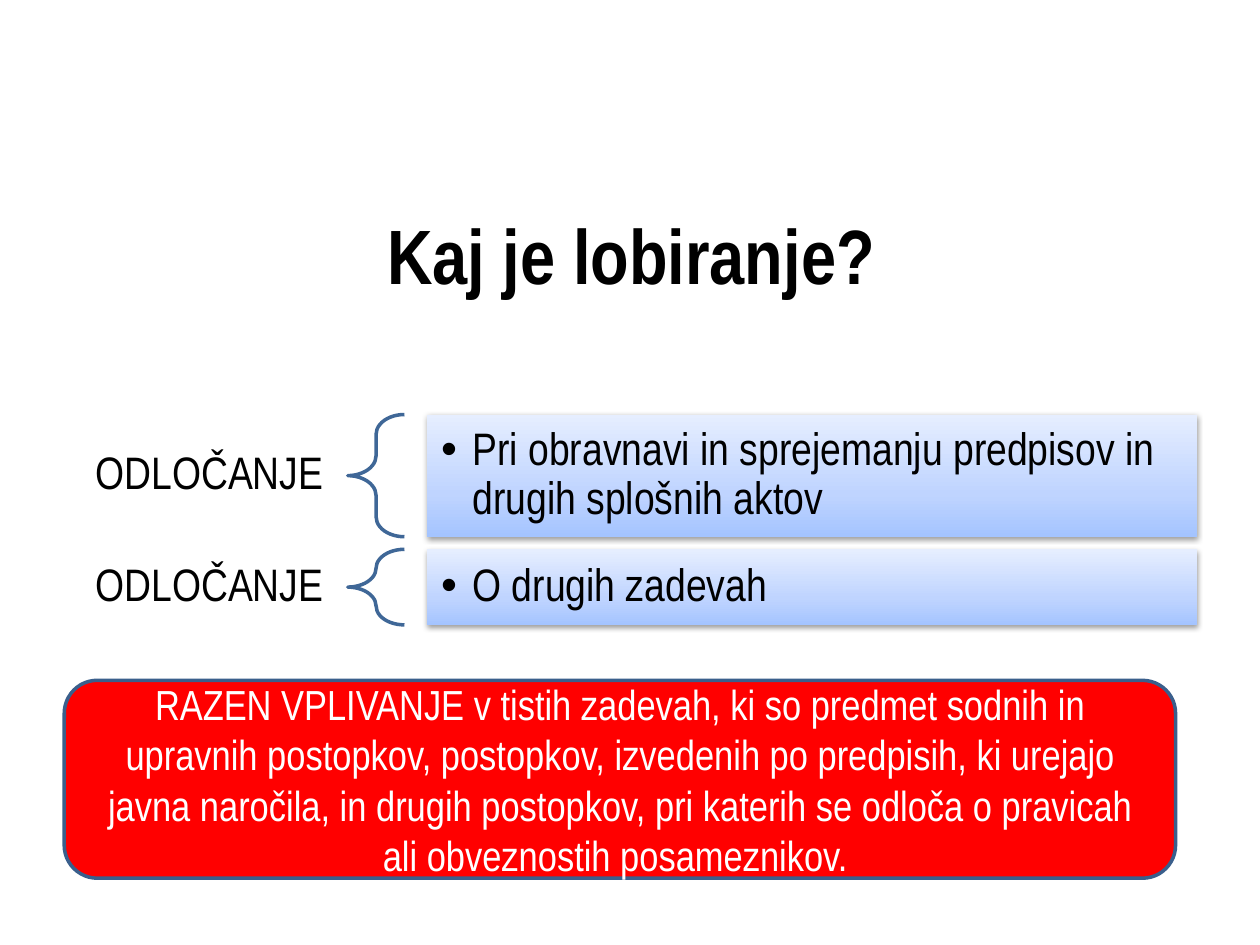
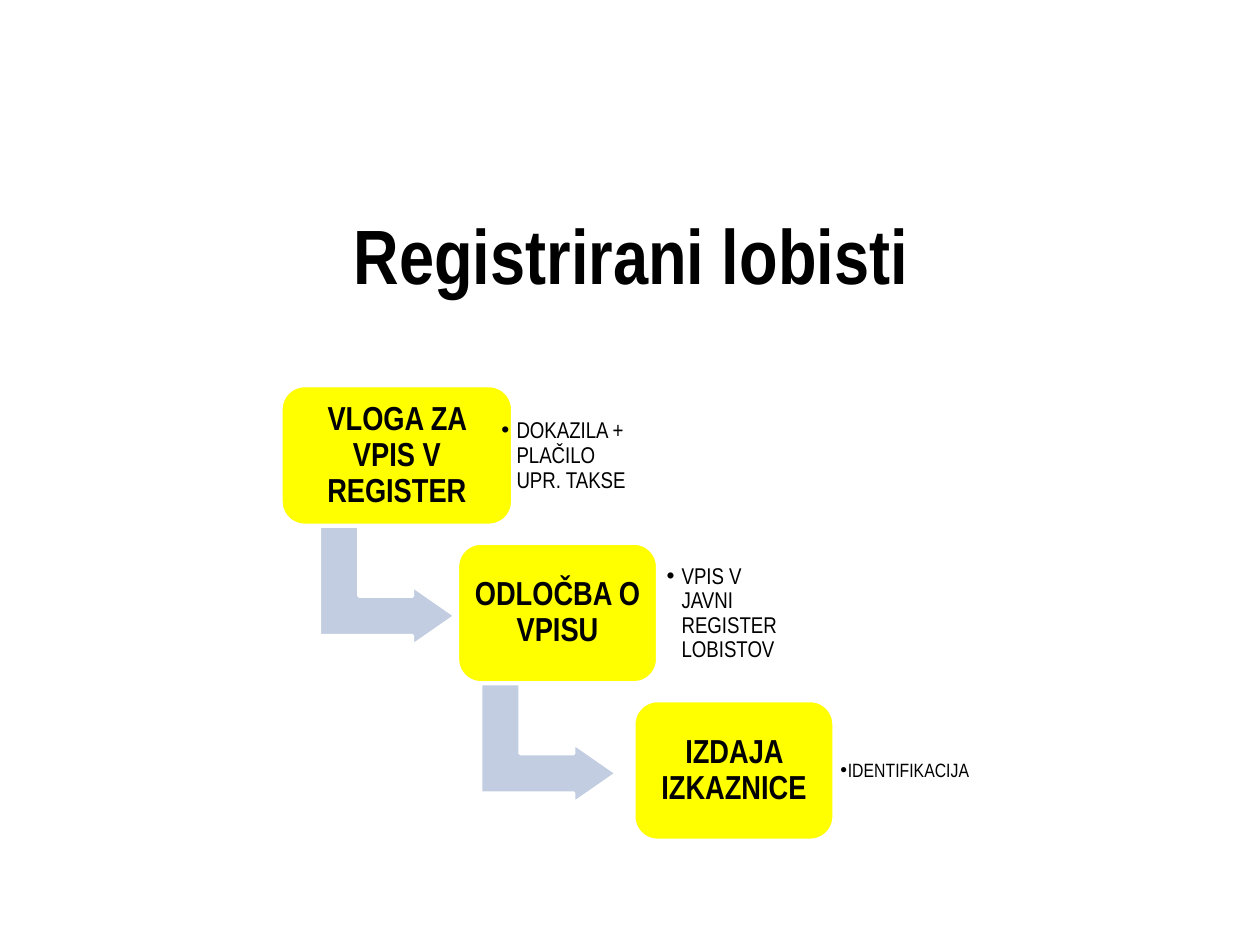
from dataclasses import dataclass

from lxml import etree
from pptx import Presentation
from pptx.dml.color import RGBColor
from pptx.enum.shapes import MSO_SHAPE
from pptx.enum.text import MSO_ANCHOR, PP_ALIGN
from pptx.oxml.ns import qn
from pptx.util import Emu, Pt

PX = 9144
FONT = "Arial Narrow"
COLORS = {
    "text": "000000",
    "white": "FFFFFF",
    "brace": "3F6797",
    "warning": "FF0000",
    "warning_edge": "3A5F8C",
    "step": "FFFF00",
    "arrow": "C2CDE1",
    "panel_low": "A4C4FF",
    "panel_mid": "BFD4FF",
    "panel_high": "E6EEFF",
}
PANEL_STOPS = ((0, "panel_low"), (35, "panel_mid"), (100, "panel_high"))

RECT = MSO_SHAPE.RECTANGLE
ROUNDED = MSO_SHAPE.ROUNDED_RECTANGLE
BRACE = MSO_SHAPE.LEFT_BRACE
BENT_ARROW = MSO_SHAPE.BENT_UP_ARROW
LEFT = PP_ALIGN.LEFT
CENTER = PP_ALIGN.CENTER
RIGHT = PP_ALIGN.RIGHT
MIDDLE = MSO_ANCHOR.MIDDLE


@dataclass(frozen=True)
class Box:
    left: int
    top: int
    width: int
    height: int

    def emu(self) -> list[Emu]:
        return [Emu(v * PX) for v in (self.left, self.top, self.width, self.height)]


@dataclass(frozen=True)
class TextStyle:
    size: int
    align: PP_ALIGN = LEFT
    color: str = "text"
    bold: bool = False
    spacing: float = 0.9
    margin_x: int = 10
    margin_y: int = 5
    bullet_indent: int = 0


@dataclass(frozen=True)
class Decision:
    label: str
    detail: str
    label_top: int
    top: int
    height: int


@dataclass(frozen=True)
class Step:
    title: str
    width: int
    note: str
    note_left: int
    note_width: int
    note_style: TextStyle


TITLE_BOX = Box(51, 139, 900, 125)
TITLE_STYLE = TextStyle(44, CENTER, bold=True, spacing=1)
LABEL_STYLE = TextStyle(26, RIGHT, margin_x=20, margin_y=7)
DETAIL_STYLE = TextStyle(26, margin_x=11, margin_y=11, bullet_indent=25)
WARNING_STYLE = TextStyle(24, CENTER, "white", spacing=1)
STEP_STYLE = TextStyle(19, CENTER, bold=True, margin_x=7, margin_y=8)
NOTE_STYLE = TextStyle(13, margin_x=7, margin_y=7, bullet_indent=12)
SMALL_NOTE_STYLE = TextStyle(11, margin_x=6, margin_y=6, bullet_indent=6)

DECISIONS = (
    Decision("ODLOČANJE", "Pri obravnavi in sprejemanju predpisov in drugih splošnih aktov",
             349, 329, 97),
    Decision("ODLOČANJE", "O drugih zadevah", 438, 436, 60),
)
EXCEPTION = (
    "RAZEN VPLIVANJE v tistih zadevah, ki so predmet sodnih in upravnih postopkov, "
    "postopkov, izvedenih po predpisih, ki urejajo javna naročila, in drugih postopkov, "
    "pri katerih se odloča o pravicah ali obveznostih posameznikov. "
)
STEPS = (
    Step("VLOGA ZA VPIS V REGISTER", 184, "DOKAZILA + PLAČILO UPR. TAKSE",
         391, 123, NOTE_STYLE),
    Step("ODLOČBA O VPISU", 159, "VPIS V JAVNI REGISTER LOBISTOV", 522, 116, NOTE_STYLE),
    Step("IZDAJA IZKAZNICE", 159, "IDENTIFIKACIJA", 661, 116, SMALL_NOTE_STYLE),
)
STEP_LEFT, STEP_TOP, STEP_DX, STEP_DY, STEP_HEIGHT = 223, 306, 140, 125, 111
ARROW_LEFT, ARROW_DX, ARROW_DROP = 260, 128, 105
NOTE_DROP = 11


def rgb(name: str) -> RGBColor:
    return RGBColor.from_string(COLORS[name])


def write(shape, text: str, style: TextStyle) -> None:
    frame = shape.text_frame
    frame.word_wrap = True
    frame.vertical_anchor = MIDDLE
    frame.margin_left = frame.margin_right = Emu(style.margin_x * PX)
    frame.margin_top = frame.margin_bottom = Emu(style.margin_y * PX)
    paragraph = frame.paragraphs[0]
    if style.bullet_indent:
        props = paragraph._p.get_or_add_pPr()
        props.set("marL", str(style.bullet_indent * PX))
        props.set("indent", str(-style.bullet_indent * PX))
        etree.SubElement(props, qn("a:buFont"), typeface="Arial")
        etree.SubElement(props, qn("a:buChar"), char="•")
    paragraph.alignment = style.align
    paragraph.line_spacing = style.spacing
    run = paragraph.add_run()
    run.text = text
    run.font.name = FONT
    run.font.size = Pt(style.size)
    run.font.bold = style.bold
    run.font.color.rgb = rgb(style.color)


def add_text(slide, box: Box, text: str, style: TextStyle) -> None:
    write(slide.shapes.add_textbox(*box.emu()), text, style)


def add_figure(slide, kind: MSO_SHAPE, box: Box, fill: str = "", line: str = "",
               adjustments: tuple[float, ...] = ()):
    figure = slide.shapes.add_shape(kind, *box.emu())
    figure.shadow.inherit = False
    for index, value in enumerate(adjustments):
        figure.adjustments[index] = value
    if fill:
        figure.fill.solid()
        figure.fill.fore_color.rgb = rgb(fill)
    else:
        figure.fill.background()
    if line:
        figure.line.color.rgb = rgb(line)
        figure.line.width = Pt(2)
    else:
        figure.line.fill.background()
    return figure


def add_panel(slide, box: Box, text: str) -> None:
    panel = add_figure(slide, RECT, box)
    panel.fill.gradient()
    panel.fill.gradient_angle = 90
    props = panel._element.spPr
    stops = props.find(".//" + qn("a:gsLst"))
    for stop in list(stops):
        stops.remove(stop)
    for position, color in PANEL_STOPS:
        stop = etree.SubElement(stops, qn("a:gs"), pos=str(position * 1000))
        etree.SubElement(stop, qn("a:srgbClr"), val=COLORS[color])
    shadow = etree.SubElement(
        props.find(qn("a:effectLst")), qn("a:outerShdw"), blurRad=str(Pt(3.1)),
        dist=str(Pt(1.6)), dir="5400000", rotWithShape="0")
    shade = etree.SubElement(shadow, qn("a:srgbClr"), val=COLORS["text"])
    etree.SubElement(shade, qn("a:alpha"), val="38000")
    write(panel, text, DETAIL_STYLE)


def add_titled_slide(prs, title: str):
    slide = prs.slides.add_slide(prs.slide_layouts[5])
    heading = slide.shapes.title
    heading.left, heading.top, heading.width, heading.height = TITLE_BOX.emu()
    write(heading, title, TITLE_STYLE)
    return slide


def build_lobbying(prs) -> None:
    slide = add_titled_slide(prs, "Kaj je lobiranje?")
    for item in DECISIONS:
        add_text(slide, Box(52, item.label_top, 225, 56), item.label, LABEL_STYLE)
        add_figure(slide, BRACE, Box(276, item.top, 45, item.height),
                   line="brace", adjustments=(0.35, 0.5))
        add_panel(slide, Box(339, item.top, 611, item.height), item.detail)
    exception = add_figure(slide, ROUNDED, Box(51, 540, 882, 157), "warning", "warning_edge")
    write(exception, EXCEPTION, WARNING_STYLE)


def build_registration(prs) -> None:
    slide = add_titled_slide(prs, "Registrirani lobisti")
    for index, step in enumerate(STEPS):
        top = STEP_TOP + index * STEP_DY
        if index < len(STEPS) - 1:
            arrow_box = Box(ARROW_LEFT + index * ARROW_DX, top + ARROW_DROP, 95, 108)
            arrow = add_figure(slide, BENT_ARROW, arrow_box, "arrow", "white",
                               (0.33, 0.25, 0.36))
            arrow.rotation = 90
        step_box = Box(STEP_LEFT + index * STEP_DX, top, step.width, STEP_HEIGHT)
        card = add_figure(slide, ROUNDED, step_box, "step", "white", (0.17,))
        write(card, step.title, STEP_STYLE)
        add_text(slide, Box(step.note_left, top + NOTE_DROP, step.note_width, 90),
                 step.note, step.note_style)


def main() -> None:
    prs = Presentation()
    prs.slide_width, prs.slide_height = Emu(1000 * PX), Emu(750 * PX)
    build_lobbying(prs)
    build_registration(prs)
    prs.save("out.pptx")


if __name__ == "__main__":
    main()
